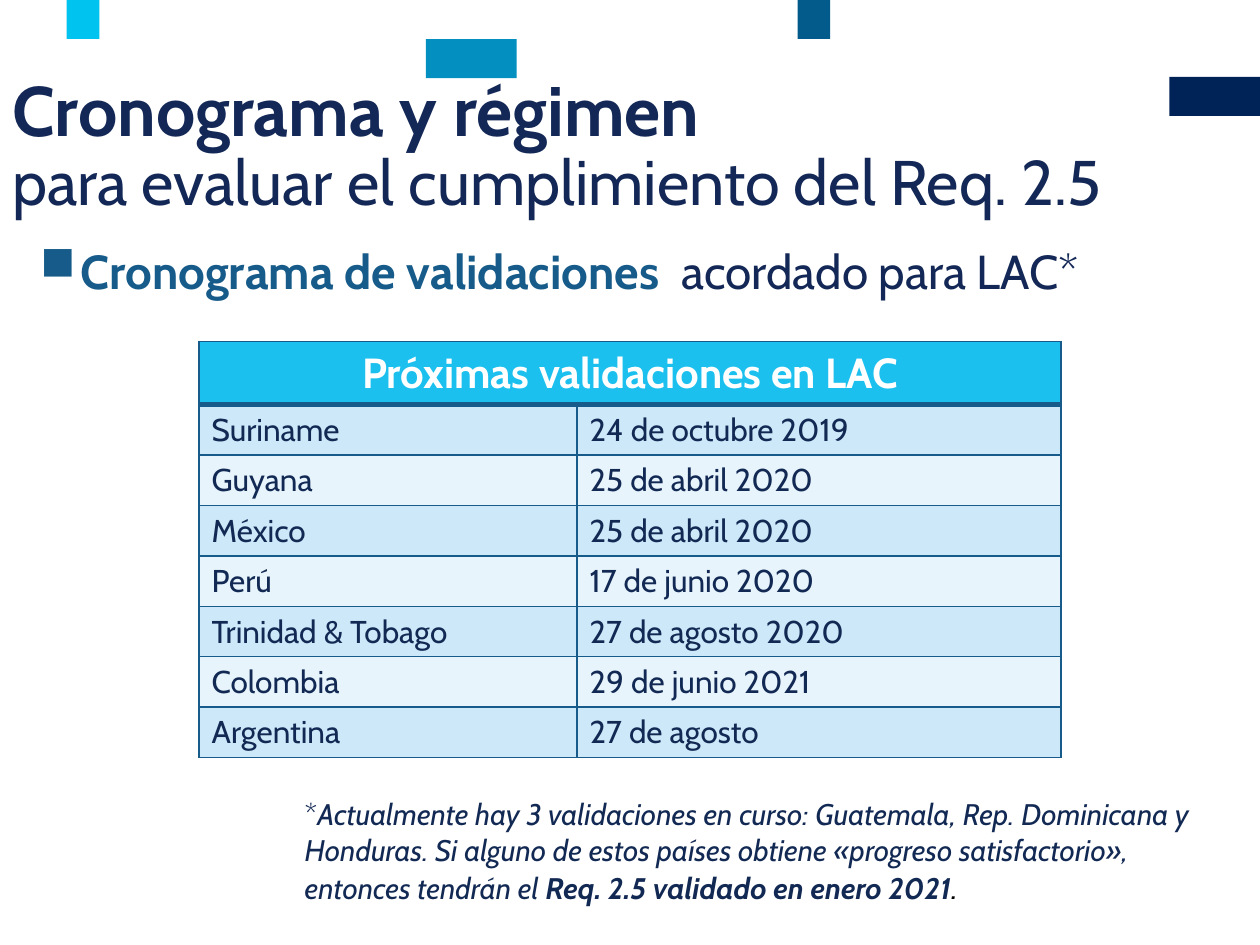
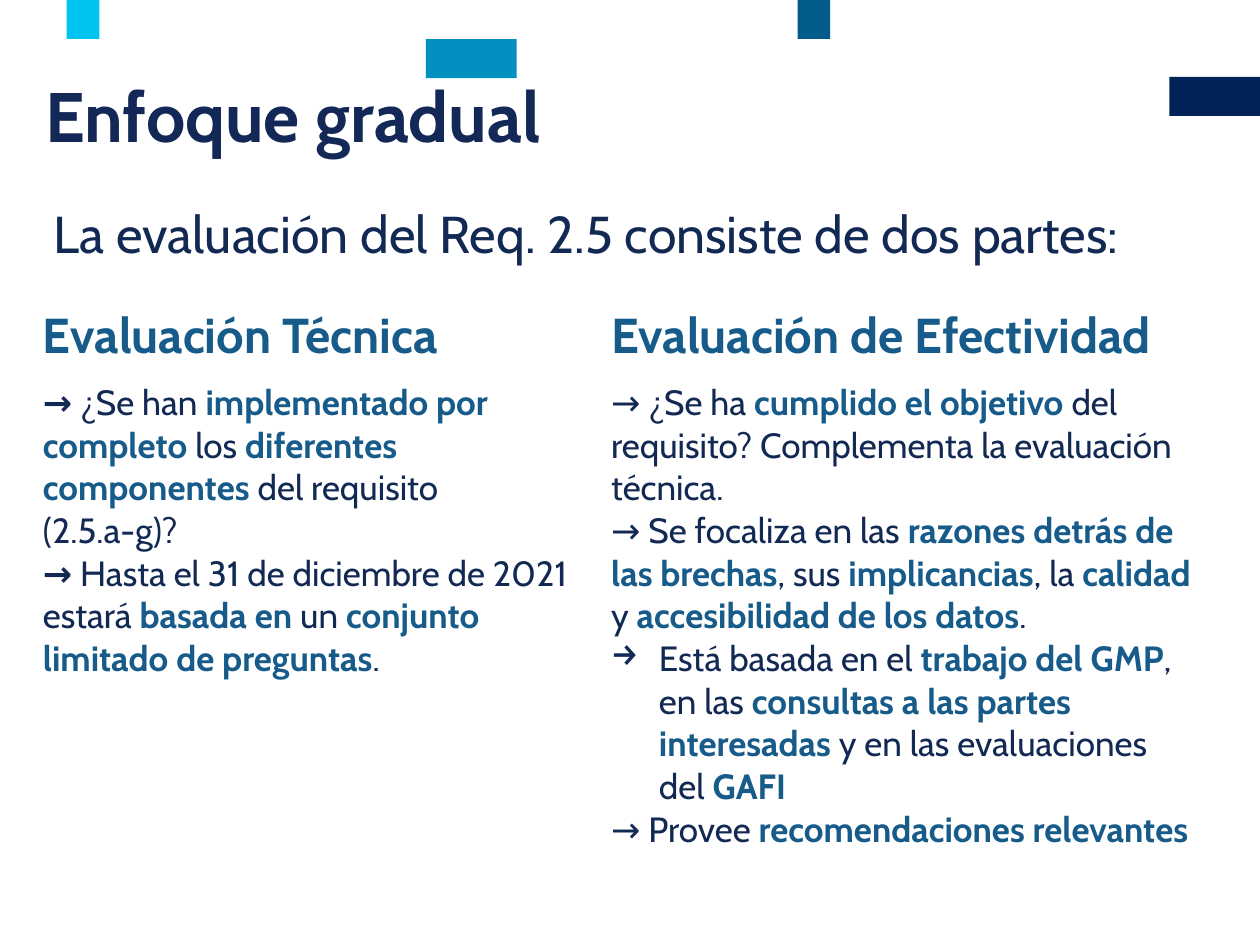
from lxml.etree import SubElement
from pptx import Presentation
from pptx.dml.color import RGBColor
from pptx.enum.shapes import MSO_SHAPE
from pptx.enum.text import PP_ALIGN
from pptx.oxml.ns import qn
from pptx.util import Inches, Pt

HUES = {
    "title": "132856", "ink": "122954", "blue": "165B89", "white": "FFFFFF",
    "dot": "000100", "head": "1CC0EE", "odd": "CDE8F8", "even": "E8F4FC",
    "navy": "002357", "deep": "025B8B", "teal": "038FBF", "cyan": "00C3F0",
}
RGB = {name: RGBColor.from_string(hue) for name, hue in HUES.items()}

# Text looks
BASE = {"name": "Cabin", "bold": False, "italic": False}
INK = BASE | {"size": Pt(20), "hue": "ink"}
KEY = INK | {"hue": "blue", "bold": True}
TITLE = BASE | {"size": Pt(40), "hue": "title", "bold": True}
NOTE = INK | {"size": Pt(17)}


def put(par, text, look, alt=None):
    """Add text to a paragraph; parts between bars take the second look."""
    for i, bit in enumerate(text.split("|")):
        if not bit:
            continue
        run = par.add_run()
        run.text = bit
        for key, val in (alt if i % 2 else look).items():
            if key == "hue":
                run.font.color.rgb = RGB[val]
            else:
                setattr(run.font, key, val)


def mark(par, sign, gap, hue):
    """Give a paragraph a hanging bullet."""
    props = par._p.get_or_add_pPr()
    props.set("marL", str(Inches(gap)))
    props.set("indent", str(-Inches(gap)))
    tint = SubElement(props, qn("a:buClr"))
    SubElement(tint, qn("a:srgbClr"), val=HUES[hue])
    SubElement(props, qn("a:buChar"), char=sign)


deck = Presentation()
deck.slide_width, deck.slide_height = Inches(10), Inches(7.5)

# Shared bands and text boxes
BANDS = [(9.28, 0.61, 0.72, "navy"), (6.33, 0, 0.26, "deep"),
         (3.38, 0.31, 0.72, "teal"), (0.53, 0, 0.26, "cyan")]
BOXES = [
    {"title": (0, 0.56, 9.38, 1.3), "lead": (0.22, 1.98, 9.38, 0.6),
     "note": (2.32, 6.27, 7.55, 1.1)},
    {"title": (0.26, 0.61, 8.95, 0.83), "lead": (0.33, 1.59, 9.5, 0.66)},
]
slides, frames = [], []
for spots in BOXES:
    slide = deck.slides.add_slide(deck.slide_layouts[6])
    for x, y, wide, hue in BANDS:
        band = slide.shapes.add_shape(
            MSO_SHAPE.RECTANGLE, *map(Inches, (x, y, wide, 0.31)))
        band.shadow.inherit = False
        band.fill.solid()
        band.fill.fore_color.rgb = RGB[hue]
        band.line.fill.background()
    texts = {}
    for name, spot in spots.items():
        frame = slide.shapes.add_textbox(*map(Inches, spot)).text_frame
        frame.word_wrap = True
        texts[name] = frame
    slides.append(slide)
    frames.append(texts)

# Slide 1: title, lead and footnote
plan, parts = frames
par = plan["title"].paragraphs[0]
put(par, "Cronograma y régimen", TITLE)
par.line_spacing = 0.89
par = plan["title"].add_paragraph()
put(par, "para evaluar el cumplimiento del Req. 2.5",
    TITLE | {"size": Pt(36), "bold": False})
par.line_spacing = 0.89

par = plan["lead"].paragraphs[0]
mark(par, "■", 0.32, "blue")
par.line_spacing = 0.74
size = {"size": Pt(27.2)}
put(par, "|Cronograma de validaciones |\u0020acordado para LAC*".replace("\u0020", " "),
    INK | size | {"hue": "title"}, KEY | size)

par = plan["note"].paragraphs[0]
slant = NOTE | {"italic": True}
put(par, "*", NOTE)
put(par, "Actualmente hay 3 validaciones en curso: Guatemala, Rep. Dominicana y "
    "Honduras. Si alguno de estos países obtiene «progreso satisfactorio», "
    "entonces tendrán el |Req. 2.5 validado en enero 2021|",
    slant, slant | {"bold": True})
put(par, ".", slant | {"size": Pt(18), "hue": "dot"})

# Slide 1: table of dates
DATES = [
    ("Suriname", "24 de octubre 2019"), ("Guyana", "25 de abril 2020"),
    ("México", "25 de abril 2020"), ("Perú", "17 de junio 2020"),
    ("Trinidad & Tobago", "27 de agosto 2020"),
    ("Colombia", "29 de junio 2021"), ("Argentina", "27 de agosto"),
]
grid = slides[0].shapes.add_table(
    len(DATES) + 1, 2, *map(Inches, (1.58, 2.71, 6.84, 3.3))).table
for col, wide in zip(grid.columns, (3, 3.84)):
    col.width = Inches(wide)
for i, row in enumerate(grid.rows):
    row.height = Inches(0.4 if i else 0.5)
    for j, cell in enumerate(row.cells):
        if i:
            put(cell.text_frame.paragraphs[0], DATES[i - 1][j],
                INK | {"size": Pt(18)})
        props = cell._tc.get_or_add_tcPr()
        for side in "LRTB":
            thick = (i, side) in ((0, "B"), (1, "T"))
            line = SubElement(props, qn(f"a:ln{side}"),
                              w=str(Pt(3 if thick else 1)))
            fill = SubElement(line, qn("a:solidFill"))
            SubElement(fill, qn("a:srgbClr"), val=HUES["blue"])
        cell.fill.solid()
        cell.fill.fore_color.rgb = RGB[("odd" if i % 2 else "even") if i else "head"]
head = grid.cell(0, 0)
head.merge(grid.cell(0, 1))
par = head.text_frame.paragraphs[0]
par.alignment = PP_ALIGN.CENTER
put(par, "Próximas validaciones en LAC", KEY | {"size": Pt(24), "hue": "white"})

# Slide 2: title and lead
par = parts["title"].paragraphs[0]
par.line_spacing = 0.89
put(par, "Enfoque gradual", TITLE)
par = parts["lead"].paragraphs[0]
par.line_spacing = 0.94
par.alignment = PP_ALIGN.JUSTIFY
put(par, "La evaluación del Req. 2.5 consiste de dos partes:",
    INK | {"size": Pt(29.6)})

# Slide 2: two columns; "•" opens a hanging item
COLS = [
    ("Evaluación Técnica", 4.51, INK | {"bold": True}, [
        "→ ¿Se han |implementado por completo| los |diferentes componentes |"
        "del requisito",
        "(2.5.a-g)?",
        "→ Hasta el 31 de diciembre de 2021 estará |basada en |un |"
        "conjunto limitado de preguntas|.",
    ]),
    ("Evaluación de Efectividad", 4.83, INK, [
        "→ ¿Se ha |cumplido el objetivo |del requisito? "
        "Complementa la evaluación técnica.",
        "→ Se focaliza en las |razones detrás de las brechas|, sus |"
        "implicancias|, la |calidad| y |accesibilidad de los datos|.",
        "•Está basada en el |trabajo del GMP|, en las |consultas a las partes "
        "interesadas |y en las evaluaciones del |GAFI|",
        "→ Provee |recomendaciones relevantes|",
    ]),
]
grid = slides[1].shapes.add_table(
    2, 2, *map(Inches, (0.24, 2.38, 9.34, 4.56))).table
grid.first_row = grid.horz_banding = False
for row, tall in zip(grid.rows, (0.6, 3.96)):
    row.height = Inches(tall)
for j, (name, wide, arrow, items) in enumerate(COLS):
    grid.columns[j].width = Inches(wide)
    top, body = grid.cell(0, j), grid.cell(1, j)
    for cell in (top, body):
        cell.fill.background()
    par = top.text_frame.paragraphs[0]
    par.alignment = PP_ALIGN.JUSTIFY
    put(par, name, KEY | {"size": Pt(28)})
    for i, text in enumerate(items):
        frame = body.text_frame
        par = frame.add_paragraph() if i else frame.paragraphs[0]
        if text[0] == "•":
            mark(par, "→", 0.38, "ink")
        elif text[0] == "→":
            put(par, "→", arrow)
        put(par, text.lstrip("→•"), INK, KEY)

deck.save("out.pptx")
